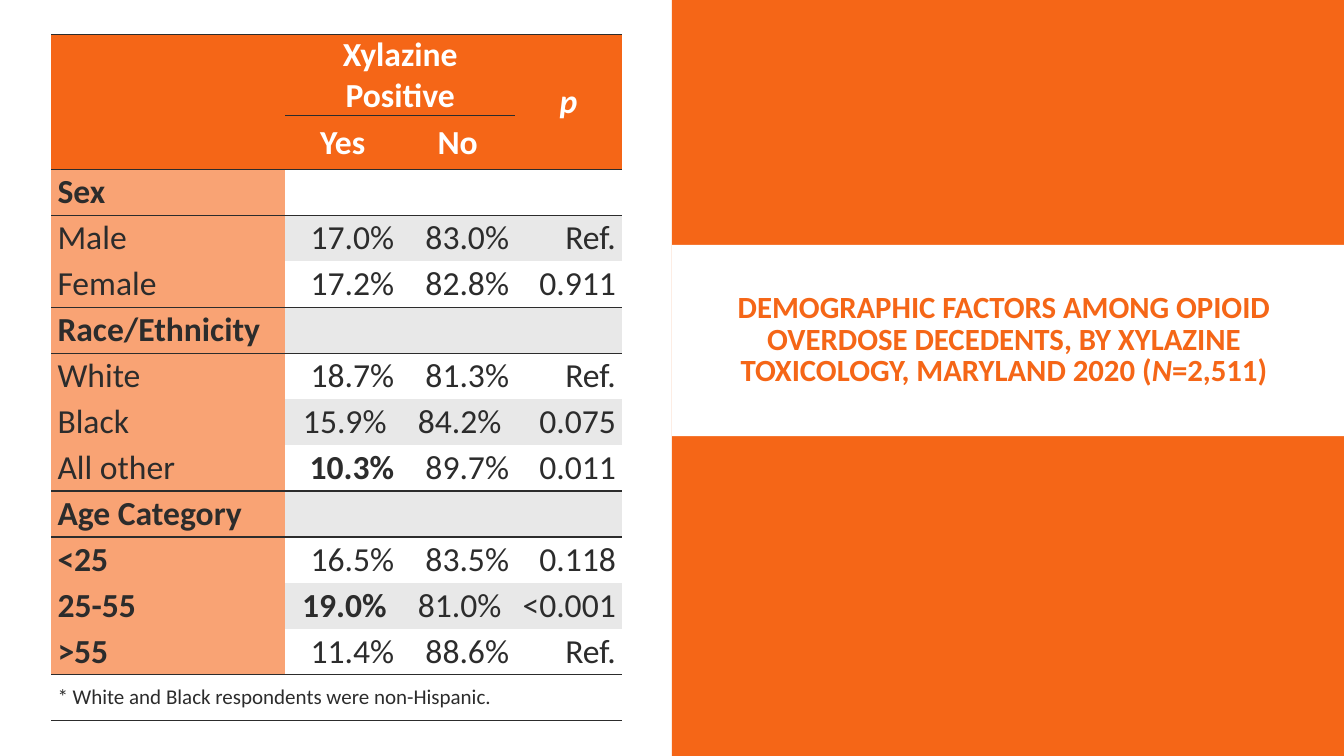
from dataclasses import dataclass

from lxml.etree import SubElement
from pptx import Presentation
from pptx.dml.color import RGBColor
from pptx.enum.shapes import MSO_SHAPE
from pptx.enum.text import MSO_ANCHOR, PP_ALIGN
from pptx.oxml.ns import qn
from pptx.slide import Slide
from pptx.table import Table, _Cell
from pptx.text.text import Font
from pptx.util import Emu, Inches, Pt

SLIDE_WIDTH, SLIDE_HEIGHT = Inches(13.33), Inches(7.5)
FONT = "Calibri"
ORANGE, PEACH, GREY = "F56617", "F9A374", "E8E8E8"
WHITE, INK = "FFFFFF", "2C2C2C"
PLAIN_TABLE_STYLE = "{2D5ABB26-0587-4C30-8999-92F81FD0307C}"

# Table grid, in percent of the slide's width and height
TABLE_LEFT, TABLE_TOP = 3.83, 4.53
COLUMN_WIDTHS = [17.4, 8.55, 8.55, 7.95]
HEADER_HEIGHTS = [10.8, 7.07]
BODY_HEIGHT = 6.08
RULED_ROWS = {0, 2, 5, 9, 13, 14}  # rows with a line above them


@dataclass(frozen=True)
class Band:
    left: float
    top: float
    width: float
    height: float
    color: str


@dataclass(frozen=True)
class Factor:
    label: str
    yes: str = ""
    no: str = ""
    p: str = ""
    bold_label: bool = False
    significant: bool = False


BANDS = [
    Band(50, 0, 50, 100, ORANGE),
    Band(50, 32.4, 50, 25.3, WHITE),
]

FACTORS = [
    Factor("Sex", bold_label=True),
    Factor("Male", "17.0%", "83.0%", "Ref."),
    Factor("Female", "17.2%", "82.8%", "0.911"),
    Factor("Race/Ethnicity", bold_label=True),
    Factor("White", "18.7%", "81.3%", "Ref."),
    Factor("Black", "15.9% ", "84.2% ", "0.075"),
    Factor("All other", "10.3%", "89.7%", "0.011", significant=True),
    Factor("Age Category", bold_label=True),
    Factor("<25", "16.5%", "83.5%", "0.118", bold_label=True),
    Factor("25-55", "19.0% ", "81.0% ", "<0.001", bold_label=True, significant=True),
    Factor(">55", "11.4%", "88.6%", "Ref.", bold_label=True),
]
FIRST_FACTOR_ROW = len(HEADER_HEIGHTS)
FOOTNOTE_ROW = FIRST_FACTOR_ROW + len(FACTORS)


def across(percent: float) -> Emu:
    return Emu(round(SLIDE_WIDTH * percent / 100))


def down(percent: float) -> Emu:
    return Emu(round(SLIDE_HEIGHT * percent / 100))


def rgb(color: str) -> RGBColor:
    return RGBColor.from_string(color)


def style_font(font: Font, size: float, color: str, bold: bool, italic: bool = False) -> None:
    font.name, font.size = FONT, Pt(size)
    font.bold, font.italic = bold, italic
    font.color.rgb = rgb(color)


def add_band(slide: Slide, band: Band) -> None:
    panel = slide.shapes.add_shape(
        MSO_SHAPE.RECTANGLE, across(band.left), down(band.top), across(band.width), down(band.height)
    )
    panel.shadow.inherit = False
    panel.fill.solid()
    panel.fill.fore_color.rgb = rgb(band.color)
    panel.line.fill.background()


def add_title(slide: Slide) -> None:
    title = slide.shapes.add_textbox(across(53), down(34.1), across(43.4), down(22)).text_frame
    title.word_wrap = True
    title.vertical_anchor = MSO_ANCHOR.MIDDLE
    paragraph = title.paragraphs[0]
    paragraph.alignment = PP_ALIGN.CENTER
    paragraph.line_spacing = 0.85
    style_font(paragraph.font, 22, ORANGE, bold=True)
    paragraph.add_run().text = (
        "DEMOGRAPHIC FACTORS AMONG OPIOID OVERDOSE DECEDENTS, BY XYLAZINE TOXICOLOGY, MARYLAND 2020 ("
    )
    sample_symbol = paragraph.add_run()
    sample_symbol.text = "N"
    sample_symbol.font.italic = True
    paragraph.add_run().text = "=2,511)"


def write_cell(cell: _Cell, text: str, fill: str, align: PP_ALIGN, color: str = INK,
               size: float = 24, bold: bool = False, italic: bool = False) -> None:
    cell.fill.solid()
    cell.fill.fore_color.rgb = rgb(fill)
    cell.margin_left = cell.margin_right = Inches(0.06)
    cell.margin_top = cell.margin_bottom = 0
    cell.vertical_anchor = MSO_ANCHOR.MIDDLE
    paragraph = cell.text_frame.paragraphs[0]
    paragraph.alignment = align
    if align == PP_ALIGN.LEFT:
        paragraph.space_before = Pt(6)
    style_font(paragraph.font, size, color, bold, italic)
    if text:
        paragraph.add_run().text = text


def rule_cell(cell: _Cell, above: bool, below: bool) -> None:
    """Draw the lines above and below a cell; they precede the fill in its properties."""
    properties = cell._tc.get_or_add_tcPr()
    edges = [tag for tag, wanted in (("a:lnT", above), ("a:lnB", below)) if wanted]
    for position, tag in enumerate(edges):
        edge = SubElement(properties, qn(tag), w=str(Pt(1)))
        SubElement(SubElement(edge, qn("a:solidFill")), qn("a:srgbClr"), val=INK)
        properties.insert(position, edge)


def fill_header(table: Table) -> None:
    table.cell(0, 0).merge(table.cell(1, 0))
    table.cell(0, 1).merge(table.cell(0, 2))
    table.cell(0, 3).merge(table.cell(1, 3))
    headings = {(0, 0): "", (0, 1): "Xylazine Positive", (0, 3): "p", (1, 1): "Yes", (1, 2): "No"}
    for (row, column), heading in headings.items():
        write_cell(table.cell(row, column), heading, ORANGE, PP_ALIGN.CENTER, WHITE,
                   bold=True, italic=heading == "p")


def fill_factors(table: Table) -> None:
    for row, factor in enumerate(FACTORS, FIRST_FACTOR_ROW):
        write_cell(table.cell(row, 0), factor.label, PEACH, PP_ALIGN.LEFT, bold=factor.bold_label)
        stripe = GREY if row % 2 else WHITE
        for column, value in enumerate((factor.yes, factor.no, factor.p), 1):
            write_cell(table.cell(row, column), value, stripe, PP_ALIGN.RIGHT,
                       bold=factor.significant and column == 1)


def add_factor_table(slide: Slide) -> None:
    heights = HEADER_HEIGHTS + [BODY_HEIGHT] * (len(FACTORS) + 1)
    frame = slide.shapes.add_table(
        len(heights), len(COLUMN_WIDTHS), across(TABLE_LEFT), down(TABLE_TOP),
        across(sum(COLUMN_WIDTHS)), down(sum(heights)),
    )
    table = frame.table
    table.first_row = table.horz_banding = False
    table._tbl.tblPr.find(qn("a:tableStyleId")).text = PLAIN_TABLE_STYLE
    for column, width in zip(table.columns, COLUMN_WIDTHS):
        column.width = across(width)
    for row, height in zip(table.rows, heights):
        row.height = down(height)

    fill_header(table)
    fill_factors(table)
    footnote = table.cell(FOOTNOTE_ROW, 0)
    footnote.merge(table.cell(FOOTNOTE_ROW, len(COLUMN_WIDTHS) - 1))
    write_cell(footnote, "* White and Black respondents were non-Hispanic.", WHITE, PP_ALIGN.LEFT, size=15)

    for row in range(len(heights)):
        for column in range(len(COLUMN_WIDTHS)):
            cell = table.cell(row, column)
            if not cell.is_spanned:
                bottom_row = row + cell.span_height if cell.is_merge_origin else row + 1
                under_heading = column in (1, 2)
                rule_cell(cell, row in RULED_ROWS or (row == 1 and under_heading),
                          bottom_row in RULED_ROWS or (bottom_row == 1 and under_heading))


def main() -> None:
    presentation = Presentation()
    presentation.slide_width, presentation.slide_height = SLIDE_WIDTH, SLIDE_HEIGHT
    slide = presentation.slides.add_slide(presentation.slide_layouts[6])
    for band in BANDS:
        add_band(slide, band)
    add_title(slide)
    add_factor_table(slide)
    presentation.save("out.pptx")


if __name__ == "__main__":
    main()
